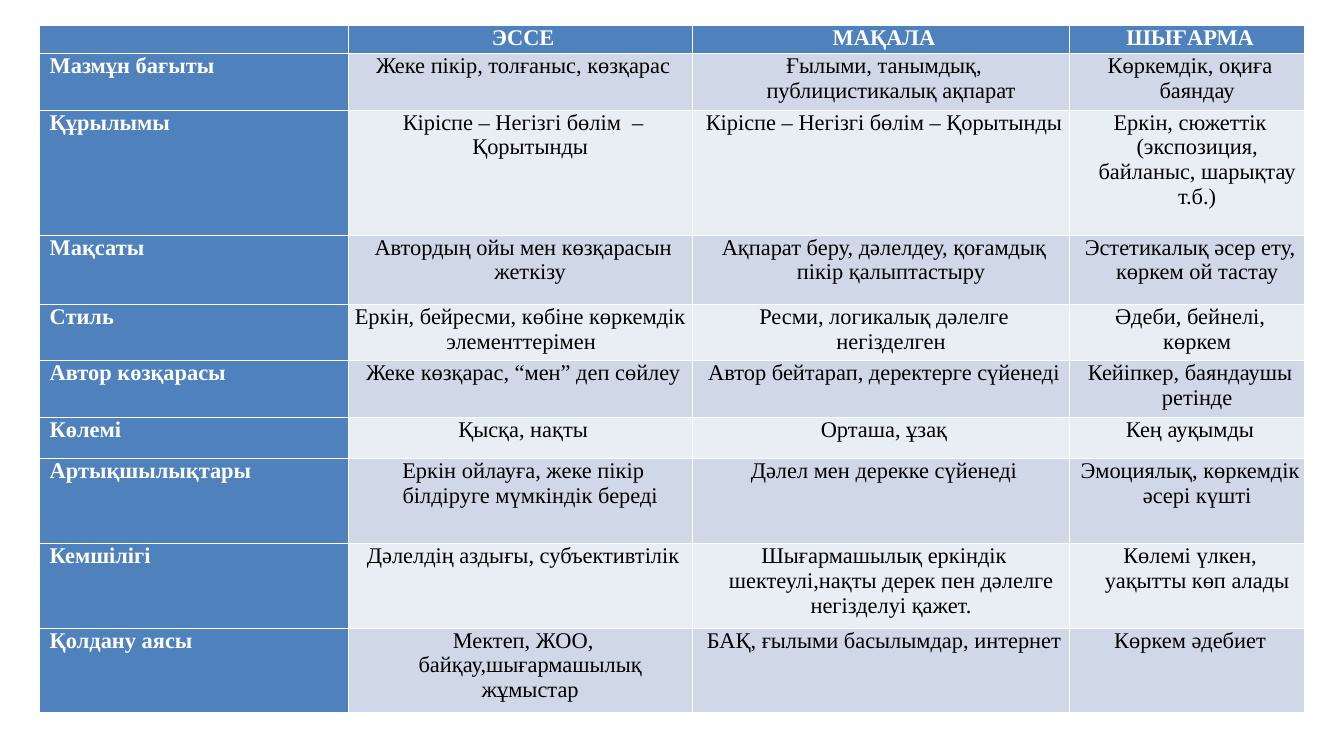
from dataclasses import dataclass

from pptx import Presentation
from pptx.dml.color import RGBColor
from pptx.enum.text import PP_ALIGN
from pptx.util import Inches, Pt

CENTER = PP_ALIGN.CENTER
JUSTIFY = PP_ALIGN.JUSTIFY


@dataclass(frozen=True)
class Theme:
    font: str = "Times New Roman"
    size: float = 24
    space_before: float = 17.9
    heading_fill: str = "4F81BD"
    heading_text: str = "FFFFFF"
    body_text: str = "000000"
    bands: tuple = ("D0D8E8", "E9EDF4")


THEME = Theme()

COLUMN_WIDTHS = [4.6, 5.12, 5.62, 3.49]
ROW_HEIGHTS = [0.42, 0.84, 1.86, 1.03, 0.84, 0.84, 0.62, 1.26, 1.26, 1.26]
HANGING = (0.3, -0.21)
NARROW_HANGING = (0.03, -0.03)
STYLE_ROW, ESSAY_COLUMN = 4, 1

ROWS = [
    ["", "ЭССЕ", "МАҚАЛА", "ШЫҒАРМА"],
    ["Мазмұн бағыты", "Жеке пікір, толғаныс, көзқарас",
     "Ғылыми, танымдық, публицистикалық ақпарат", "Көркемдік, оқиға баяндау"],
    ["Құрылымы", "Кіріспе – Негізгі бөлім  – Қорытынды",
     "Кіріспе – Негізгі бөлім – Қорытынды",
     "Еркін, сюжеттік (экспозиция, байланыс, шарықтау т.б.)"],
    ["Мақсаты", "Автордың ойы мен көзқарасын жеткізу",
     "Ақпарат беру, дәлелдеу, қоғамдық пікір қалыптастыру",
     "Эстетикалық әсер ету, көркем ой тастау"],
    ["Стиль", "Еркін, бейресми, көбіне көркемдік элементтерімен",
     "Ресми, логикалық дәлелге негізделген", "Әдеби, бейнелі, көркем"],
    ["Автор көзқарасы", "Жеке көзқарас, “мен” деп сөйлеу",
     "Автор бейтарап, деректерге сүйенеді", "Кейіпкер, баяндаушы ретінде"],
    ["Көлемі", "Қысқа, нақты", "Орташа, ұзақ", "Кең ауқымды"],
    ["Артықшылықтары", "Еркін ойлауға, жеке пікір білдіруге мүмкіндік береді",
     "Дәлел мен дерекке сүйенеді", "Эмоциялық, көркемдік әсері күшті"],
    ["Кемшілігі", "Дәлелдің аздығы, субъективтілік",
     "Шығармашылық еркіндік шектеулі,нақты дерек пен дәлелге негізделуі қажет.",
     "Көлемі үлкен, уақытты көп алады"],
    ["Қолдану аясы", "Мектеп, ЖОО, байқау,шығармашылық жұмыстар",
     "БАҚ, ғылыми басылымдар, интернет", "Көркем әдебиет"],
]


def set_indent(p, left, first_line):
    pPr = p._p.get_or_add_pPr()
    pPr.set("marL", str(Inches(left)))
    pPr.set("indent", str(Inches(first_line)))


def fill_cell(cell, color):
    cell.fill.solid()
    cell.fill.fore_color.rgb = RGBColor.from_string(color)
    cell.margin_left = cell.margin_right = Inches(0.07)
    cell.margin_top = cell.margin_bottom = 0


def write_cell(cell, text, align, color, bold, indent):
    p = cell.text_frame.paragraphs[0]
    p.alignment = align
    p.space_before = Pt(THEME.space_before)
    set_indent(p, *indent)
    r = p.add_run()
    r.text = text
    r.font.name = THEME.font
    r.font.size = Pt(THEME.size)
    r.font.bold = bold
    r.font.color.rgb = RGBColor.from_string(color)


def add_comparison_table(slide):
    """Add the genre table; its default style draws the white cell borders."""
    frame = slide.shapes.add_table(
        len(ROWS), len(COLUMN_WIDTHS), Inches(0.58), Inches(0.38),
        Inches(sum(COLUMN_WIDTHS)), Inches(sum(ROW_HEIGHTS)))
    table = frame.table
    table.first_col = True
    for column, width in zip(table.columns, COLUMN_WIDTHS):
        column.width = Inches(width)
    for row, height in zip(table.rows, ROW_HEIGHTS):
        row.height = Inches(height)

    for i, texts in enumerate(ROWS):
        for j, text in enumerate(texts):
            cell = table.cell(i, j)
            heading = i == 0 or j == 0
            band = THEME.bands[(i - 1) % 2]
            fill_cell(cell, THEME.heading_fill if heading else band)
            if text:
                narrow = (i, j) == (STYLE_ROW, ESSAY_COLUMN)
                write_cell(cell, text,
                           align=JUSTIFY if j == 0 else CENTER,
                           color=THEME.heading_text if heading else THEME.body_text,
                           bold=heading,
                           indent=NARROW_HANGING if narrow else HANGING)


def main():
    prs = Presentation()
    prs.slide_width = Inches(20)
    prs.slide_height = Inches(11.25)
    blank_layout = prs.slide_layouts[6]
    slide = prs.slides.add_slide(blank_layout)
    add_comparison_table(slide)
    prs.save("out.pptx")


if __name__ == "__main__":
    main()
